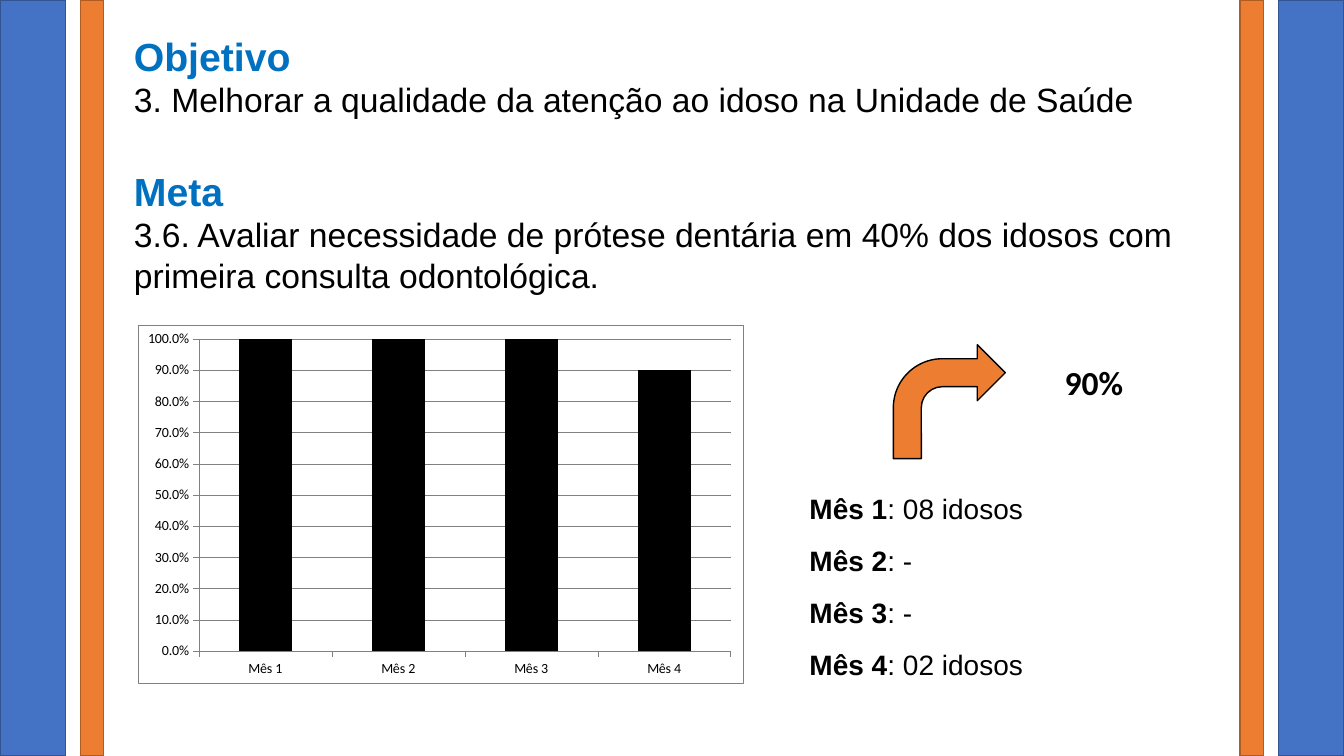
import pptx
import pptx.chart.data
import pptx.dml.color
import pptx.enum.chart
import pptx.enum.shapes
import pptx.enum.text
import pptx.oxml
import pptx.oxml.ns
import pptx.util

WIDTH = pptx.util.Inches(13.33)
HEIGHT = pptx.util.Inches(7.5)
BLUE, ORANGE, GREY = "4472C4", "ED7D31", "808080"
HEADING, BLACK, WHITE = "0070C0", "000000", "FFFFFF"
SHAPE = pptx.enum.shapes.MSO_SHAPE


def rgb(value):
    return pptx.dml.color.RGBColor.from_string(value)


def place(x, y, w, h):
    return (int(WIDTH * x / 100), int(HEIGHT * y / 100),
            int(WIDTH * w / 100), int(HEIGHT * h / 100))


def style_font(font, size, color=BLACK, bold=False, name="Arial"):
    font.name = name
    font.size = pptx.util.Pt(size)
    font.bold = bold
    font.color.rgb = rgb(color)


def style_line(line, color, width):
    line.color.rgb = rgb(color)
    line.width = pptx.util.Pt(width)


def add_shape(s, kind, box, fill, line):
    sp = s.shapes.add_shape(kind, *place(*box))
    sp.shadow.inherit = False
    sp.fill.solid()
    sp.fill.fore_color.rgb = rgb(fill)
    style_line(sp.line, line, 1)


def add_stripes(s, x, width, fill, line):
    for left in (x, 100 - x - width):
        add_shape(s, SHAPE.RECTANGLE, (left, 0, width, 100), fill, line)


def add_text(s, box, paragraphs, gap=0):
    tf = s.shapes.add_textbox(*place(*box)).text_frame
    tf.word_wrap = True
    for i, runs in enumerate(paragraphs):
        p = tf.paragraphs[0] if i == 0 else tf.add_paragraph()
        p.space_before = pptx.util.Pt(gap if i else 0)
        for text, *style in runs:
            r = p.add_run()
            r.text = text
            style_font(r.font, *style)
    return tf


def add_section(s, y, h, title, body):
    return add_text(s, (9.23, y, 81.77, h),
                    [[(title, 28, HEADING, True)], [(body, 24)]])


def chart_xml(body):
    return pptx.oxml.parse_xml(body.replace(
        ">", " " + pptx.oxml.ns.nsdecls("c", "a") + ">", 1))


def area_xml(border):
    return chart_xml(
        f'<c:spPr><a:solidFill><a:srgbClr val="{WHITE}"/></a:solidFill>'
        f'{border}</c:spPr>')


def style_areas(chart):
    root = chart.font._element.getparent().getparent().getparent()
    while root.getparent() is not None:
        root = root.getparent()
    border = (f'<a:ln w="3175"><a:solidFill><a:srgbClr val="{GREY}"/>'
              '</a:solidFill></a:ln>')
    root.find(pptx.oxml.ns.qn("c:txPr")).addprevious(area_xml(border))
    plot = root.find(".//" + pptx.oxml.ns.qn("c:plotArea"))
    for old in plot.findall(pptx.oxml.ns.qn("c:layout")):
        plot.remove(old)
    sizes = "".join(f'<c:{tag} val="{value}"/>' for tag, value in
                    (("x", 0.1), ("y", 0.04), ("w", 0.88), ("h", 0.87)))
    plot.insert(0, chart_xml(
        '<c:layout><c:manualLayout><c:layoutTarget val="inner"/>'
        '<c:xMode val="edge"/><c:yMode val="edge"/>'
        f'{sizes}</c:manualLayout></c:layout>'))
    plot.append(area_xml("<a:ln><a:noFill/></a:ln>"))


def add_column_chart(s, box, categories, values):
    data = pptx.chart.data.CategoryChartData()
    data.categories = categories
    data.add_series("Series 1", values)
    chart = s.shapes.add_chart(
        pptx.enum.chart.XL_CHART_TYPE.COLUMN_CLUSTERED, *place(*box), data).chart
    chart.has_legend = False
    chart.has_title = False
    style_font(chart.font, 10, name="Calibri")
    plot = chart.plots[0]
    plot.vary_by_categories = False
    plot.gap_width = 150
    fill = plot.series[0].format.fill
    fill.solid()
    fill.fore_color.rgb = rgb(BLACK)
    for axis in (chart.category_axis, chart.value_axis):
        axis.major_tick_mark = pptx.enum.chart.XL_TICK_MARK.OUTSIDE
        style_font(axis.tick_labels.font, 10, name="Calibri")
        style_line(axis.format.line, GREY, 0.25)
    axis = chart.value_axis
    axis.minimum_scale, axis.maximum_scale, axis.major_unit = 0, 1, 0.1
    axis.tick_labels.number_format = "0.0%"
    axis.tick_labels.number_format_is_linked = False
    style_line(axis.major_gridlines.format.line, GREY, 0.25)
    style_areas(chart)


def main():
    prs = pptx.Presentation()
    prs.slide_width, prs.slide_height = WIDTH, HEIGHT
    s = prs.slides.add_slide(prs.slide_layouts[6])
    tf = add_section(s, 21.47, 18.4, "Meta",
                     "3.6. Avaliar necessidade de prótese dentária em 40% dos "
                     "idosos com primeira consulta odontológica.")
    tf.paragraphs[0].alignment = pptx.enum.text.PP_ALIGN.JUSTIFY
    add_section(s, 3.6, 13.07, "Objetivo",
                "3. Melhorar a qualidade da atenção ao idoso na Unidade de Saúde")
    add_stripes(s, 0, 4.88, BLUE, "325491")
    add_stripes(s, 6, 1.73, ORANGE, "AF5C24")
    months = [f"Mês {n}" for n in range(1, 5)]
    counts = ["08 idosos", "-", "-", "02 idosos"]
    add_text(s, (59.49, 64.4, 19.28, 26),
             [[(month, 20, BLACK, True), (f": {count}", 20)]
              for month, count in zip(months, counts)], gap=13)
    add_text(s, (78.47, 47.2, 9.75, 6.67),
             [[("90%", 24, BLACK, True, "Calibri")]])
    add_shape(s, SHAPE.BENT_ARROW, (66.47, 45.6, 8.33, 15.07), ORANGE, BLACK)
    add_column_chart(s, (10.28, 42.93, 45, 47.47), months, [1, 1, 1, 0.9])
    prs.save("out.pptx")


if __name__ == "__main__":
    main()
